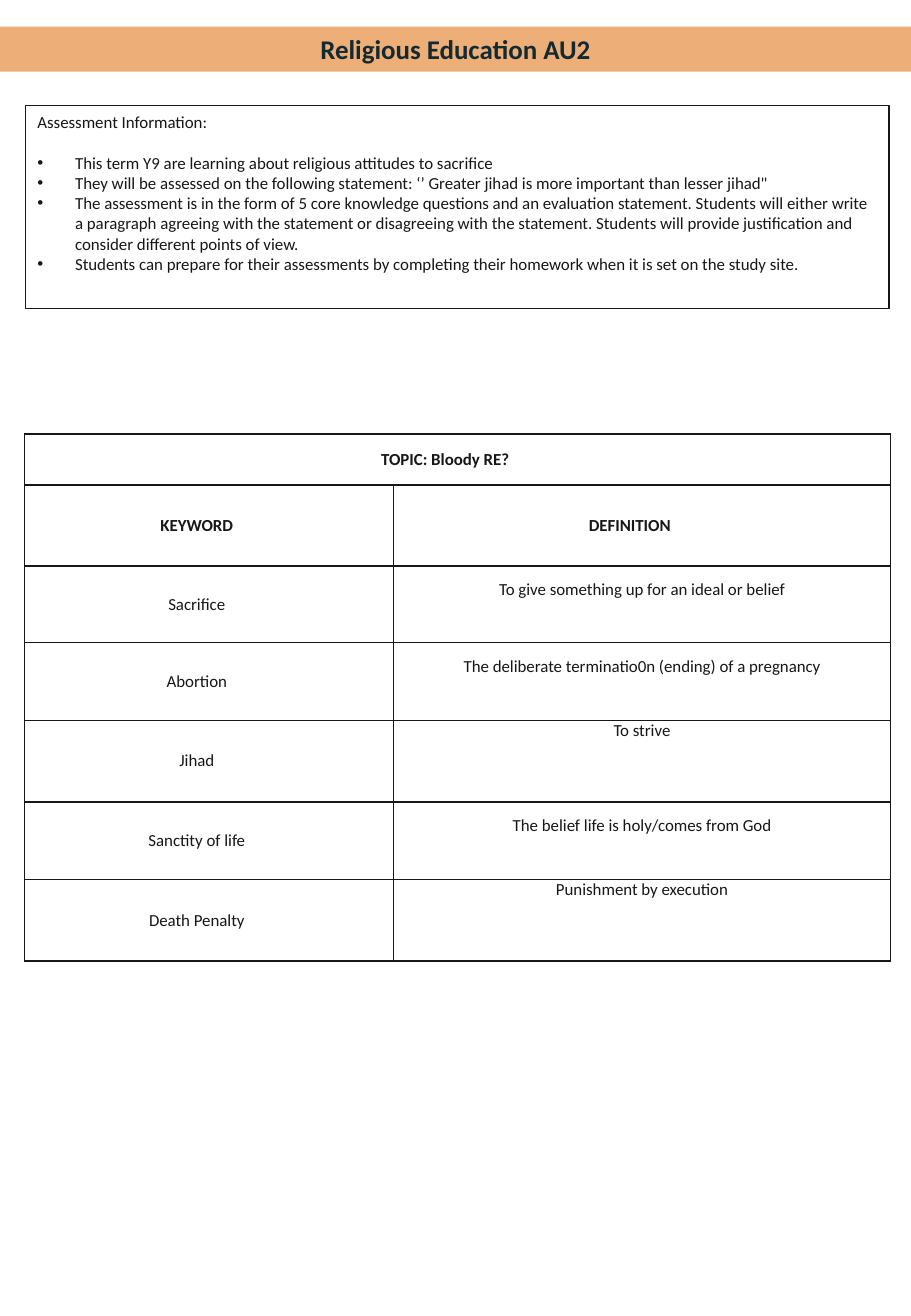
from dataclasses import dataclass

from lxml.etree import SubElement
from pptx import Presentation
from pptx.dml.color import RGBColor as Rgb
from pptx.enum.shapes import MSO_SHAPE as Shape
from pptx.enum.text import MSO_ANCHOR as Anchor, PP_ALIGN as Align
from pptx.oxml.ns import qn
from pptx.util import Inches, Pt

COLORS = {"band": "EDAF77", "title": "142A33", "ink": "181717"}


@dataclass
class Entry:
    """A keyword row: drop is the definition's inset from the row top."""
    word: str
    meaning: str
    height: float
    drop: float


ENTRIES = [
    Entry("Sacrifice", "To give something up for an ideal or belief", 0.63, 0.11),
    Entry("Abortion", "The deliberate terminatio0n (ending) of a pregnancy", 0.64, 0.11),
    Entry("Jihad", "To strive", 0.67, 0),
    Entry("Sanctity of life", "The belief life is holy/comes from God", 0.64, 0.11),
    Entry("Death Penalty", "Punishment by execution", 0.67, 0),
]
POINTS = [
    "This term Y9 are learning about religious attitudes to sacrifice",
    "They will be assessed on the following statement: ‘’ Greater jihad is more "
    "important than lesser jihad\"",
    "The assessment is in the form of 5 core knowledge questions and an evaluation "
    "statement. Students will either write a paragraph agreeing with the statement or "
    "disagreeing with the statement. Students will provide justification and consider "
    "different points of view.",
    "Students can prepare for their assessments by completing their homework when it "
    "is set on the study site.",
]


def rgb(name: str) -> Rgb:
    return Rgb.from_string(COLORS[name])


def write(par, text: str, *, size: float = 10, bold: bool = False,
          color: str = "ink", align=Align.CENTER, before: float = 0,
          bullet: bool = False) -> None:
    par.alignment = align
    par.space_before = Pt(before)
    if bullet:
        props = par._p.get_or_add_pPr()
        props.set("marL", str(Inches(0.31)))
        props.set("indent", str(-Inches(0.31)))
        SubElement(props, qn("a:buFont")).set("typeface", "Arial")
        SubElement(props, qn("a:buChar")).set("char", "•")
    run = par.add_run()
    run.text = text
    font = run.font
    font.name, font.size, font.bold = "Calibri", Pt(size), bold
    font.color.rgb = rgb(color)


def add_box(slide, left: float, top: float, width: float, height: float, *,
            fill: str = "", line: str = "", anchor=Anchor.TOP):
    box = slide.shapes.add_shape(Shape.RECTANGLE, Inches(left), Inches(top),
                                 Inches(width), Inches(height))
    box.shadow.inherit = False
    if fill:
        box.fill.solid()
        box.fill.fore_color.rgb = rgb(fill)
    else:
        box.fill.background()
    if line:
        box.line.color.rgb = rgb(line)
        box.line.width = Pt(0.75)
    else:
        box.line.fill.background()
    box.text_frame.word_wrap = True
    box.text_frame.vertical_anchor = anchor
    return box.text_frame


def frame_cell(cell) -> None:
    """Give a cell its four borders and no fill."""
    props = cell._tc.get_or_add_tcPr()
    for side in ("lnL", "lnR", "lnT", "lnB"):
        line = SubElement(props, qn(f"a:{side}"), w=str(Pt(1)))
        fill = SubElement(line, qn("a:solidFill"))
        SubElement(fill, qn("a:srgbClr"), val=COLORS["ink"])
    cell.fill.background()


def fill_cell(cell, text: str, *, bold: bool = False, right: float = 0.27,
              top: float = 0, anchor=Anchor.MIDDLE) -> None:
    cell.margin_left, cell.margin_right = Inches(0.07), Inches(right)
    cell.margin_top, cell.margin_bottom = Inches(top), 0
    cell.vertical_anchor = anchor
    write(cell.text_frame.paragraphs[0], text, bold=bold)


def add_terms(slide) -> None:
    heights = [0.42, 0.67] + [entry.height for entry in ENTRIES]
    grid = slide.shapes.add_table(len(heights), 2, Inches(0.2), Inches(3.57),
                                  Inches(7.13), Inches(sum(heights))).table
    grid.first_row = grid.horz_banding = False
    for col, width in zip(grid.columns, (3.04, 4.09)):
        col.width = Inches(width)
    for row, height in zip(grid.rows, heights):
        row.height = Inches(height)
        for cell in row.cells:
            frame_cell(cell)
    grid.cell(0, 0).merge(grid.cell(0, 1))
    fill_cell(grid.cell(0, 0), "TOPIC: Bloody RE?", bold=True)
    for col, head in enumerate(("KEYWORD", "DEFINITION")):
        fill_cell(grid.cell(1, col), head, bold=True)
    for row, entry in enumerate(ENTRIES, 2):
        fill_cell(grid.cell(row, 0), entry.word)
        fill_cell(grid.cell(row, 1), entry.meaning, right=0.07,
                  top=entry.drop, anchor=Anchor.TOP)


def main() -> None:
    deck = Presentation()
    deck.slide_width, deck.slide_height = Inches(7.5), Inches(10.83)
    slide = deck.slides.add_slide(deck.slide_layouts[6])

    title = add_box(slide, 0, 0.22, 7.5, 0.37, fill="band", anchor=Anchor.MIDDLE)
    write(title.paragraphs[0], "Religious Education AU2", size=16, bold=True,
          color="title")

    info = add_box(slide, 0.21, 0.87, 7.11, 1.67, line="ink")
    write(info.paragraphs[0], "Assessment Information:", align=Align.LEFT)
    for num, point in enumerate(POINTS):
        write(info.add_paragraph(), point, align=Align.LEFT, bullet=True,
              before=0 if num else 12)

    add_terms(slide)
    deck.save("out.pptx")


if __name__ == "__main__":
    main()
